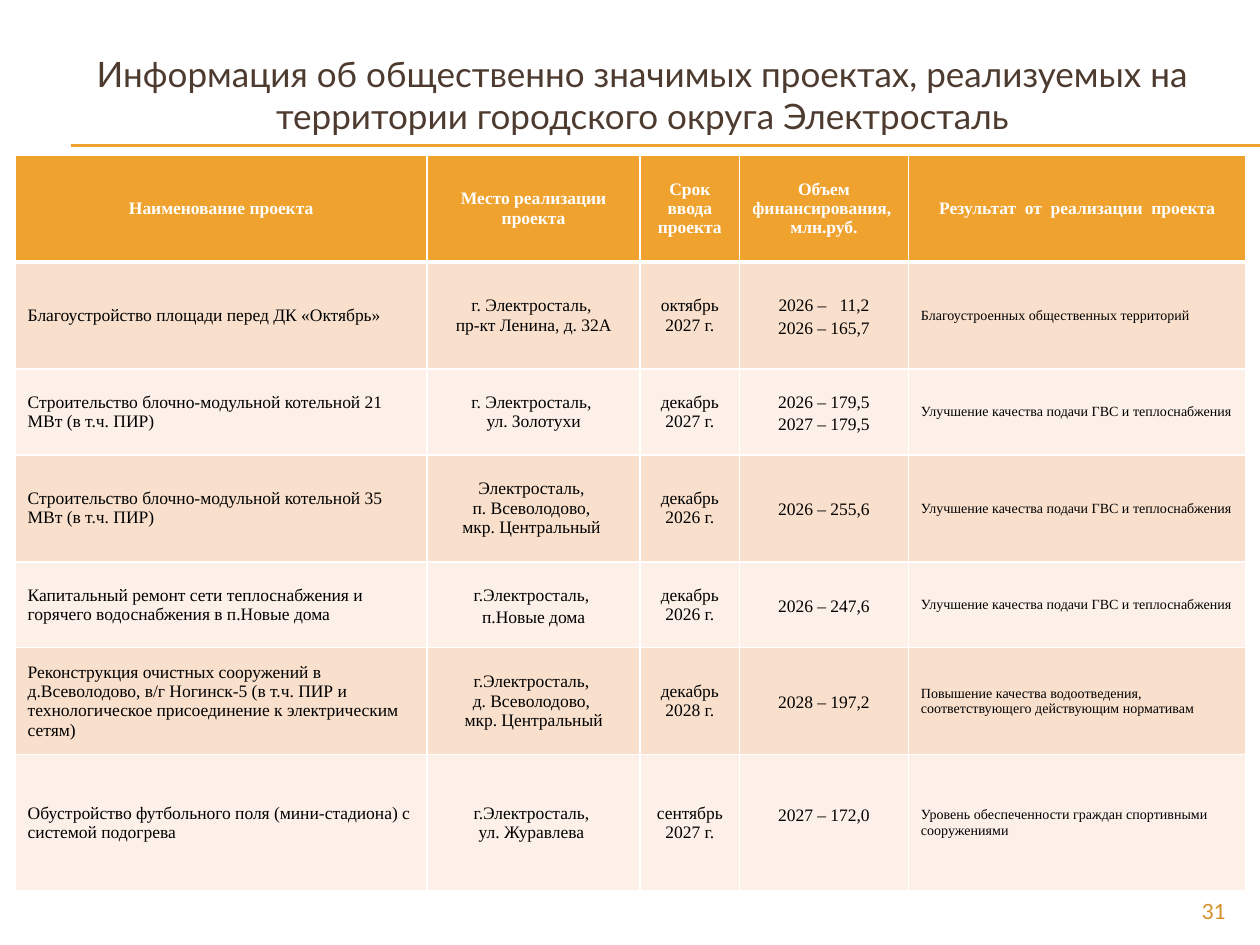
from dataclasses import dataclass

from lxml.etree import SubElement
from pptx import Presentation
from pptx.dml.color import RGBColor
from pptx.enum.shapes import MSO_CONNECTOR as Connector
from pptx.enum.text import MSO_ANCHOR as Anchor, PP_ALIGN as Align
from pptx.oxml.ns import qn
from pptx.util import Inches, Pt

ORANGE, WHITE, BLACK = "F0A22E", "FFFFFF", "000000"
BANDS = ("F9E0CD", "FCF0E8")
BODY_FONT, HEADING_FONT = "Times New Roman", "Lato"
COLUMN_WIDTHS = (3.27, 1.69, 0.79, 1.34, 2.68)
ROW_HEIGHTS = (0.85, 0.85, 0.68, 0.85, 0.68, 0.85, 1.08)
HEADERS = (
    "Наименование проекта",
    "Место реализации проекта",
    "Срок ввода проекта",
    "Объем финансирования, \nмлн.руб.",
    "Результат  от  реализации  проекта",
)
HEAT_RESULT = "Улучшение качества подачи ГВС и теплоснабжения"


@dataclass(frozen=True)
class Project:
    name: str
    place: str
    deadline: str
    funding: str
    result: str
    place_spacing: float = 1.0
    funding_spacing: float = 1.15
    funding_bottom: float = 0.05


@dataclass(frozen=True)
class TextStyle:
    size: float
    color: str
    font: str = BODY_FONT
    bold: bool = False
    align: Align = Align.LEFT
    spacing: float = 1.0


PROJECTS = (
    Project("Благоустройство площади перед ДК «Октябрь»",
            "г. Электросталь, \nпр-кт Ленина, д. 32А", "октябрь 2027 г.",
            "2026 –   11,2\n2026 – 165,7", "Благоустроенных общественных территорий"),
    Project("Строительство блочно-модульной котельной 21 МВт (в т.ч. ПИР)",
            "г. Электросталь, \nул. Золотухи", "декабрь 2027 г.",
            "2026 – 179,5\n2027 – 179,5", HEAT_RESULT),
    Project("Строительство блочно-модульной котельной 35 МВт (в т.ч. ПИР)",
            "Электросталь, \nп. Всеволодово, \nмкр. Центральный ", "декабрь 2026 г.",
            "2026 – 255,6", HEAT_RESULT),
    Project("Капитальный ремонт сети теплоснабжения и горячего водоснабжения в п.Новые дома",
            "г.Электросталь, \nп.Новые дома", "декабрь\n2026 г.",
            "2026 – 247,6", HEAT_RESULT, place_spacing=1.15),
    Project("Реконструкция очистных сооружений в д.Всеволодово, в/г Ногинск-5 (в т.ч. ПИР и "
            "технологическое присоединение к электрическим сетям)",
            "г.Электросталь, \nд. Всеволодово, \nмкр. Центральный", "декабрь 2028 г.",
            "2028 – 197,2",
            "Повышение качества водоотведения, соответствующего действующим нормативам"),
    Project("Обустройство футбольного поля (мини-стадиона) с системой подогрева",
            "г.Электросталь, \nул. Журавлева ", "сентябрь 2027 г.",
            "2027 – 172,0", "Уровень обеспеченности граждан спортивными сооружениями",
            funding_spacing=1.0, funding_bottom=0.16),
)


def rgb(value: str) -> RGBColor:
    return RGBColor.from_string(value)


def write_text(frame, text: str, style: TextStyle) -> None:
    frame.text = text
    formats = {"size": Pt(style.size), "name": style.font, "bold": style.bold}
    for paragraph in frame.paragraphs:
        paragraph.alignment = style.align
        paragraph.line_spacing = style.spacing
        for run in paragraph.runs:
            for key, value in formats.items():
                setattr(run.font, key, value)
            run.font.color.rgb = rgb(style.color)


def add_rule(slide, top: float) -> None:
    rule = slide.shapes.add_connector(
        Connector.STRAIGHT, Inches(0.56), Inches(top), Inches(10), Inches(top))
    rule.line.color.rgb = rgb(ORANGE)
    rule.line.width = Pt(0.75)
    SubElement(rule._element.spPr, qn("a:effectLst"))


def set_borders(cell, widths: dict[str, float]) -> None:
    properties = cell._tc.get_or_add_tcPr()
    for side, width in widths.items():
        line = SubElement(properties, qn(f"a:ln{side}"), w=str(Pt(width)))
        fill = SubElement(line, qn("a:solidFill"))
        SubElement(fill, qn("a:srgbClr"), val=WHITE)


def fill_cell(cell, row: int, text: str, style: TextStyle, color: str) -> None:
    set_borders(cell, {"L": 1, "R": 1, "T": 3 if row == 1 else 1, "B": 3 if row == 0 else 1})
    cell.fill.solid()
    cell.fill.fore_color.rgb = rgb(color)
    cell.vertical_anchor = Anchor.MIDDLE
    write_text(cell.text_frame, text, style)


def add_project_table(slide) -> None:
    table = slide.shapes.add_table(
        len(ROW_HEIGHTS), len(COLUMN_WIDTHS), Inches(0.12), Inches(1.23),
        Inches(sum(COLUMN_WIDTHS)), Inches(sum(ROW_HEIGHTS))).table
    for column, width in zip(table.columns, COLUMN_WIDTHS):
        column.width = Inches(width)
    for row, height in zip(table.rows, ROW_HEIGHTS):
        row.height = Inches(height)
    header_style = TextStyle(10, WHITE, bold=True, align=Align.CENTER)
    for column, header in enumerate(HEADERS):
        fill_cell(table.cell(0, column), 0, header, header_style, ORANGE)
    for row, project in enumerate(PROJECTS, start=1):
        entries = (
            (project.name, TextStyle(10, BLACK)),
            (project.place, TextStyle(10, BLACK, align=Align.CENTER,
                                      spacing=project.place_spacing)),
            (project.deadline, TextStyle(10, BLACK, align=Align.CENTER)),
            (project.funding, TextStyle(10, BLACK, align=Align.CENTER,
                                        spacing=project.funding_spacing)),
            (project.result, TextStyle(8, BLACK)),
        )
        for column, (text, style) in enumerate(entries):
            fill_cell(table.cell(row, column), row, text, style, BANDS[(row - 1) % 2])
        table.cell(row, 3).margin_bottom = Inches(project.funding_bottom)


def format_title(slide) -> None:
    title = slide.shapes.title
    bounds = {"left": 0.35, "top": 0.29, "width": 9.5, "height": 0.92}
    for key, value in bounds.items():
        setattr(title, key, Inches(value))
    title.text_frame.vertical_anchor = Anchor.MIDDLE
    write_text(title.text_frame,
               "Информация об общественно значимых проектах, реализуемых на "
               "территории городского округа Электросталь",
               TextStyle(20, "4E3B30", HEADING_FONT, align=Align.CENTER))


def add_page_number(slide) -> None:
    box = slide.shapes.add_textbox(Inches(9), Inches(7.08), Inches(0.83), Inches(0.27))
    box.text_frame.word_wrap = True
    write_text(box.text_frame, "31",
               TextStyle(12, "D48F29", HEADING_FONT, align=Align.RIGHT))


def main() -> None:
    presentation = Presentation()
    presentation.slide_width, presentation.slide_height = Inches(10), Inches(7.5)
    slide = presentation.slides.add_slide(presentation.slide_layouts[5])
    for top in (1.15, 1.16):
        add_rule(slide, top)
    format_title(slide)
    add_project_table(slide)
    add_page_number(slide)
    presentation.save("out.pptx")


if __name__ == "__main__":
    main()
